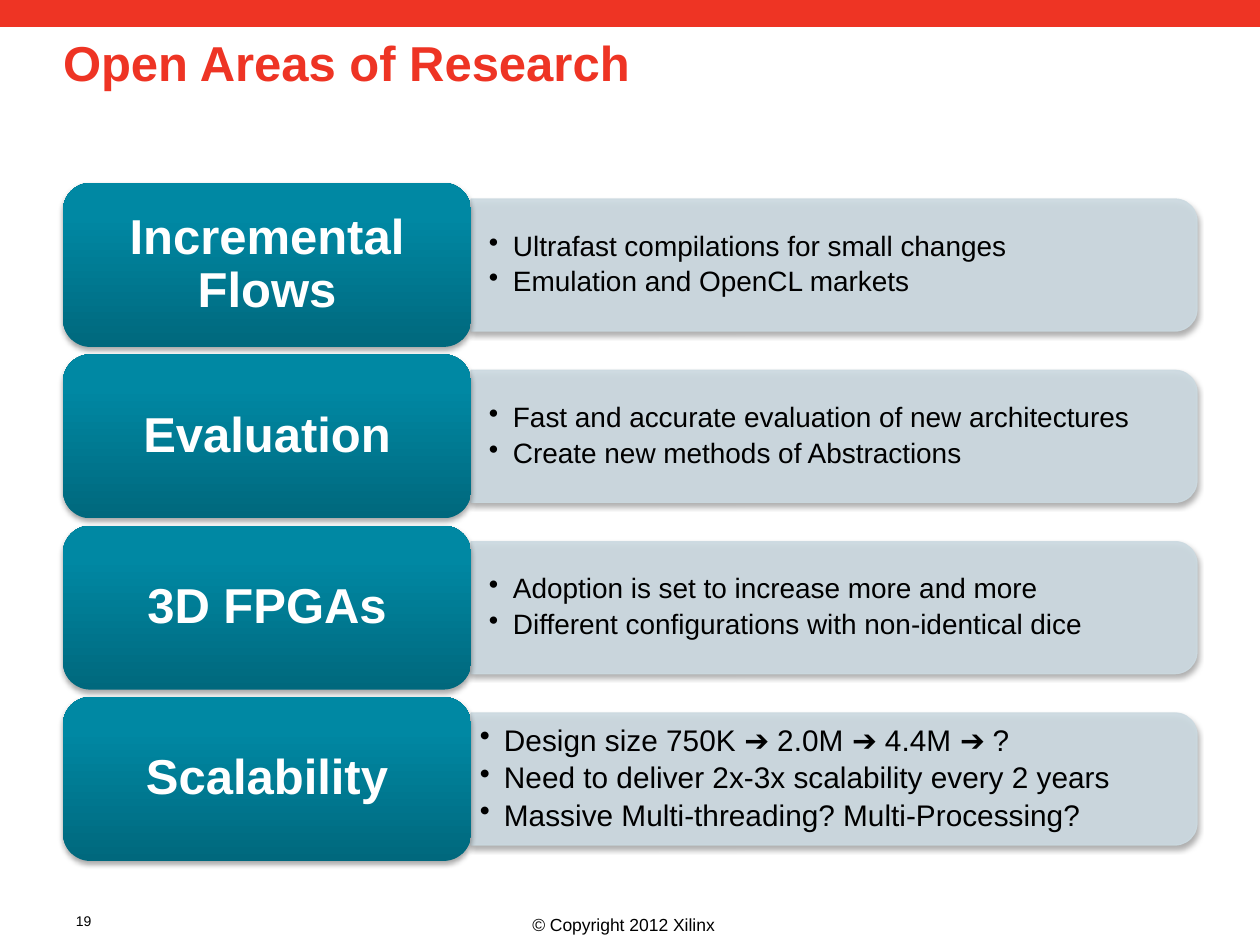
from lxml import etree
from pptx import Presentation
from pptx import util as u
from pptx.dml.color import RGBColor
from pptx.enum import shapes, text
from pptx.oxml.ns import qn

EMU_PER_PX = 914400 / 126
RED, TEAL_DARK, TEAL, PANEL = "EE3424", "00687D", "0088A3", "CCDAE1"

TOPICS = [
    ("Incremental Flows", ["Ultrafast compilations for small changes",
                           "Emulation and OpenCL markets"]),
    ("Evaluation", ["Fast and accurate evaluation of new architectures",
                    "Create new methods of Abstractions"]),
    ("3D FPGAs", ["Adoption is set to increase more and more",
                  "Different configurations with non-identical dice"]),
    ("Scalability", ["Design size 750K ➔ 2.0M ➔ 4.4M ➔ ?",
                     "Need to deliver 2x-3x scalability every 2 years",
                     "Massive Multi-threading? Multi-Processing?"]),
]


def px(length):
    return u.Emu(round(length * EMU_PER_PX))


def color(hex_value):
    return RGBColor.from_string(hex_value)


def add_child(parent, tag, **attributes):
    child = etree.SubElement(parent, qn(tag))
    for key, value in attributes.items():
        child.set(key, str(value))
    return child


def set_alpha(fill, percent):
    add_child(fill._xPr.find(qn("a:solidFill"))[0], "a:alpha", val=percent * 1000)


def add_shadow(shape):
    effects = shape._element.spPr.find(qn("a:effectLst"))
    shadow = add_child(effects, "a:outerShdw", blurRad=u.Pt(3.1), dist=u.Pt(1.8),
                       dir=90 * 60000, rotWithShape=0)
    black = add_child(shadow, "a:srgbClr", val="000000")
    add_child(black, "a:alpha", val=35000)


def write(shape, lines, size, hex_value="000000", bold=False, align="LEFT",
          anchor="TOP", insets=(13, 6, 13, 6), spacing=None, after=None, bullet_indent=0):
    """Insets are left, top, right and bottom in px."""
    frame = shape.text_frame
    frame.word_wrap = True
    frame.auto_size = text.MSO_AUTO_SIZE.NONE
    frame.vertical_anchor = text.MSO_ANCHOR[anchor]
    (frame.margin_left, frame.margin_top,
     frame.margin_right, frame.margin_bottom) = map(px, insets)
    frame.text = "\n".join(lines)
    for paragraph in frame.paragraphs:
        if bullet_indent:
            properties = paragraph._p.get_or_add_pPr()
            properties.set("marL", str(px(bullet_indent)))
            properties.set("indent", str(-px(bullet_indent)))
            add_child(properties, "a:buChar", char="•")
        paragraph.alignment = text.PP_ALIGN[align]
        paragraph.line_spacing = spacing
        if after:
            paragraph.space_after = u.Pt(after)
        font = paragraph.font
        font.name, font.size, font.bold = "Arial", u.Pt(size), bold
        font.color.rgb = color(hex_value)


def add_shape(slide, preset, left, top, width, height):
    shape = slide.shapes.add_shape(shapes.MSO_SHAPE[preset],
                                   px(left), px(top), px(width), px(height))
    shape.shadow.inherit = False
    shape.line.fill.background()
    return shape


def add_text_box(slide, left, top, width, height):
    return slide.shapes.add_textbox(px(left), px(top), px(width), px(height))


def add_header(slide, width):
    bar = add_shape(slide, "RECTANGLE", 0, 0, width, 27)
    bar.fill.solid()
    bar.fill.fore_color.rgb = color(RED)
    title = slide.shapes.title
    title.left, title.top, title.width, title.height = map(px, (63, 29, 1134, 157))
    write(title, ["Open Areas of Research"], 28, RED, bold=True,
          insets=(0, 6, 13, 6), spacing=0.98)


def add_panel(slide, left, top, width, height):
    """Panel rounded on its right side: a top-rounded shape turned by 90 degrees."""
    panel = add_shape(slide, "ROUND_2_SAME_RECTANGLE", left + (width - height) / 2,
                      top + (height - width) / 2, height, width)
    panel.rotation = 90
    panel.fill.solid()
    panel.fill.fore_color.rgb = color(PANEL)
    set_alpha(panel.fill, 90)
    panel.line.color.rgb = color(PANEL)
    panel.line.width = u.Pt(0.75)
    set_alpha(panel.line.fill, 90)
    add_shadow(panel)


def add_topic(slide, left, top, width, height, name, points):
    label_width, panel_inset = 408, 16
    panel_left, panel_width = left + label_width, width - label_width
    add_panel(slide, panel_left, top + panel_inset, panel_width, height - 2 * panel_inset)

    crowded = len(points) > 2
    box = add_text_box(slide, panel_left, top + 23, panel_width - 6, height - 46)
    write(box, points, 17 if crowded else 16, anchor="MIDDLE",
          insets=(9, 5, 9, 5) if crowded else (18, 9, 18, 9),
          spacing=0.9, after=3, bullet_indent=24)

    label = add_shape(slide, "ROUNDED_RECTANGLE", left, top, label_width, height)
    label.fill.gradient()
    label.fill.gradient_angle = 90
    for stop, position, shade in zip(label.fill.gradient_stops, (0, 0.8), (TEAL_DARK, TEAL)):
        stop.position = position
        stop.color.rgb = color(shade)
    add_shadow(label)
    write(label, [name], 28, "FFFFFF", bold=True, align="CENTER", anchor="MIDDLE",
          insets=(23, 16, 23, 16), spacing=0.9)


def add_topics(slide, left, top, width, height):
    row_height = 164
    pitch = (height - row_height) / (len(TOPICS) - 1)
    for row, (name, points) in enumerate(TOPICS):
        add_topic(slide, left, top + row * pitch, width, row_height, name, points)


def add_footer(slide, top, width):
    notice = add_text_box(slide, 0, top, width, 39)
    write(notice, ["© Copyright 2012 Xilinx"], 10, align="CENTER",
          insets=(0, 6, 13, 6), spacing=1.1)
    write(add_text_box(slide, 63, top, 116, 34), ["19"], 8)


def main():
    deck = Presentation()
    deck.slide_width, deck.slide_height = px(1260), px(945)
    slide = deck.slides.add_slide(deck.slide_layouts[5])
    add_header(slide, 1260)
    add_topics(slide, 63, 183, 1134, 678)
    add_footer(slide, 906, 1260)
    deck.save("out.pptx")


if __name__ == "__main__":
    main()
